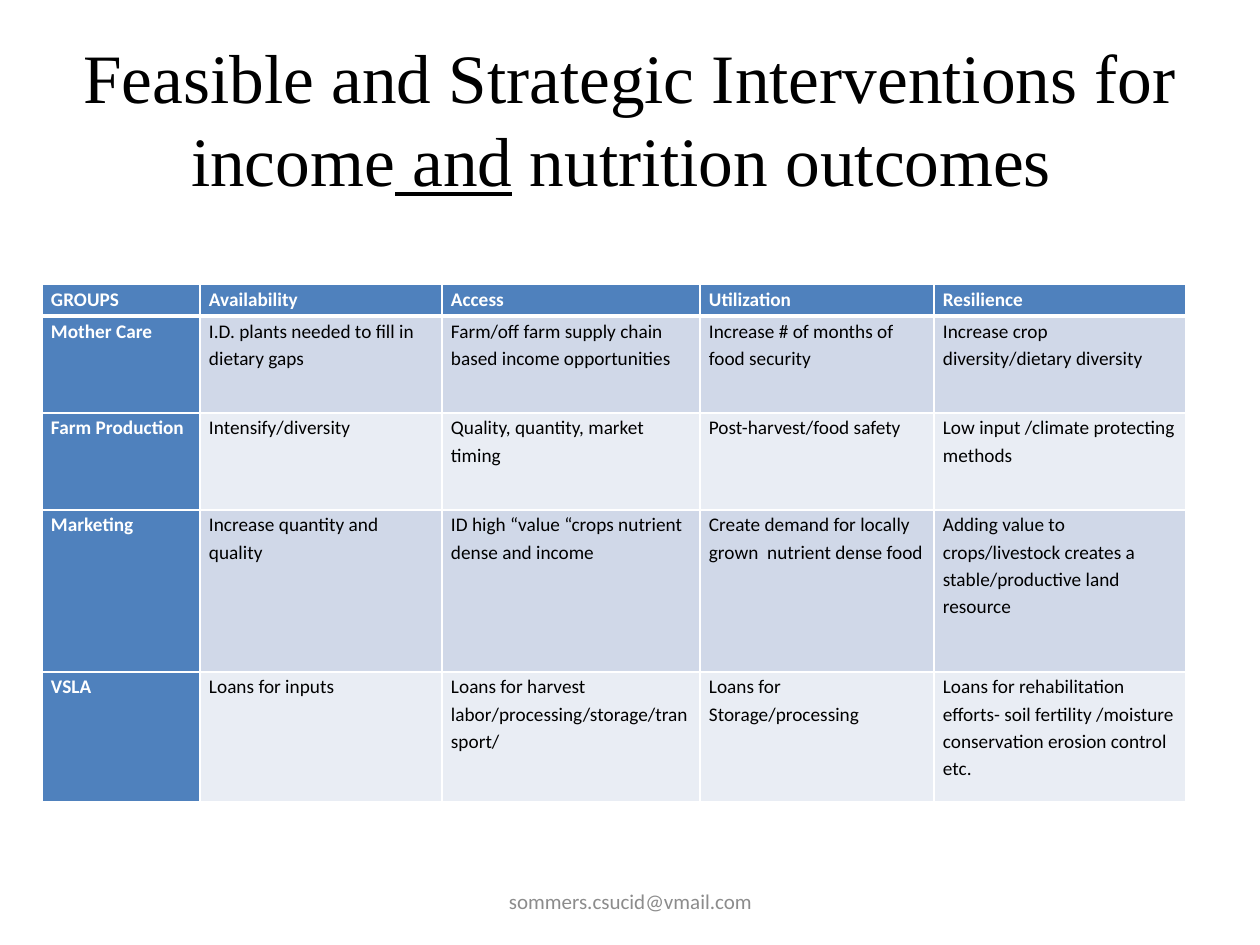
from dataclasses import dataclass

from lxml.etree import SubElement
from pptx import Presentation
from pptx.dml.color import RGBColor
from pptx.enum.text import MSO_ANCHOR as Anchor, PP_ALIGN as Align
from pptx.oxml.ns import qn
from pptx.util import Emu, Pt


@dataclass(frozen=True)
class Theme:
    ink: str = "000000"
    paper: str = "FFFFFF"
    accent: str = "4F81BD"
    bands: tuple = ("D0D8E8", "E9EDF4")
    muted: str = "8C8C8C"
    serif: str = "Times New Roman"
    sans: str = "Calibri"
    title_size: float = 39.6
    table_size: int = 11
    footer_size: int = 12
    rule: int = 1
    header_rule: int = 3


def px(length):
    return Emu(round(length * 914400 / 126))


class SlideBuilder:
    """Draws styled elements on the current slide."""

    def __init__(self, slide, theme):
        self.slide = slide
        self.theme = theme

    def run(self, paragraph, words, font, size, color, bold=False, underline=False):
        run = paragraph.add_run()
        run.text = words
        run.font.name = font
        run.font.size = Pt(size)
        run.font.bold = bold
        run.font.underline = underline
        run.font.color.rgb = RGBColor.from_string(color)

    def text(self, box, runs, font, size, color):
        frame = self.slide.shapes.add_textbox(*map(px, box)).text_frame
        frame.word_wrap = True
        frame.vertical_anchor = Anchor.MIDDLE
        paragraph = frame.paragraphs[0]
        paragraph.alignment = Align.CENTER
        for words, underline in runs:
            self.run(paragraph, words, font, size, color, underline=underline)

    def borders(self, cell, top, bottom):
        rule = self.theme.rule
        properties = cell._tc.get_or_add_tcPr()
        for side, width in zip("LRTB", (rule, rule, top, bottom)):
            line = SubElement(properties, qn(f"a:ln{side}"), w=str(Pt(width)))
            fill = SubElement(line, qn("a:solidFill"))
            SubElement(fill, qn("a:srgbClr"), val=self.theme.paper)

    def cell(self, cell, words, row, column):
        theme = self.theme
        heading = row == 0 or column == 0
        self.borders(
            cell,
            top=theme.header_rule if row == 1 else theme.rule,
            bottom=theme.header_rule if row == 0 else theme.rule,
        )
        cell.fill.solid()
        fill = theme.accent if heading else theme.bands[(row - 1) % 2]
        cell.fill.fore_color.rgb = RGBColor.from_string(fill)
        cell.margin_left = cell.margin_right = px(9)
        cell.margin_top = cell.margin_bottom = 0
        paragraph = cell.text_frame.paragraphs[0]
        paragraph.line_spacing = 1.15
        color = theme.paper if heading else theme.ink
        self.run(paragraph, words, theme.sans, theme.table_size, color, bold=heading)

    def table(self, left, top, widths, heights, content):
        table = self.slide.shapes.add_table(
            len(heights), len(widths), px(left), px(top), px(sum(widths)), px(sum(heights))
        ).table
        for column, width in zip(table.columns, widths):
            column.width = px(width)
        for row, height in zip(table.rows, heights):
            row.height = px(height)
        for row, entries in enumerate(content):
            for column, words in enumerate(entries):
                self.cell(table.cell(row, column), words, row, column)


INTERVENTIONS = [
    ("GROUPS", "Availability", "Access", "Utilization", "Resilience"),
    (
        "Mother Care",
        "I.D. plants needed to fill in dietary gaps",
        "Farm/off farm supply chain based income opportunities",
        "Increase # of months of food security",
        "Increase crop diversity/dietary diversity",
    ),
    (
        "Farm Production",
        "Intensify/diversity",
        "Quality, quantity, market timing",
        "Post-harvest/food safety",
        "Low input /climate protecting methods",
    ),
    (
        "Marketing",
        "Increase quantity and quality",
        "ID high “value “crops nutrient dense and income",
        "Create demand for locally grown  nutrient dense food",
        "Adding value to crops/livestock creates a stable/productive land resource",
    ),
    (
        "VSLA",
        "Loans for inputs",
        "Loans for harvest labor/processing/storage/transport/",
        "Loans for Storage/processing",
        "Loans for rehabilitation efforts- soil fertility /moisture conservation erosion control etc.",
    ),
]


def main():
    deck = Presentation()
    deck.slide_width, deck.slide_height = px(1260), px(945)
    theme = Theme()
    builder = SlideBuilder(deck.slides.add_slide(deck.slide_layouts[6]), theme)
    headline = [
        ("Feasible and Strategic Interventions for income", False),
        (" and", True),
        (" nutrition outcomes ", False),
    ]
    builder.text((63, 38, 1134, 158), headline, theme.serif, theme.title_size, theme.ink)
    builder.table(42, 284, (158, 242, 258, 234, 252), (32, 97, 97, 162, 130), INTERVENTIONS)
    contact = [("sommers.csucid@vmail.com", False)]
    builder.text((431, 876, 399, 50), contact, theme.sans, theme.footer_size, theme.muted)
    deck.save("out.pptx")


if __name__ == "__main__":
    main()
